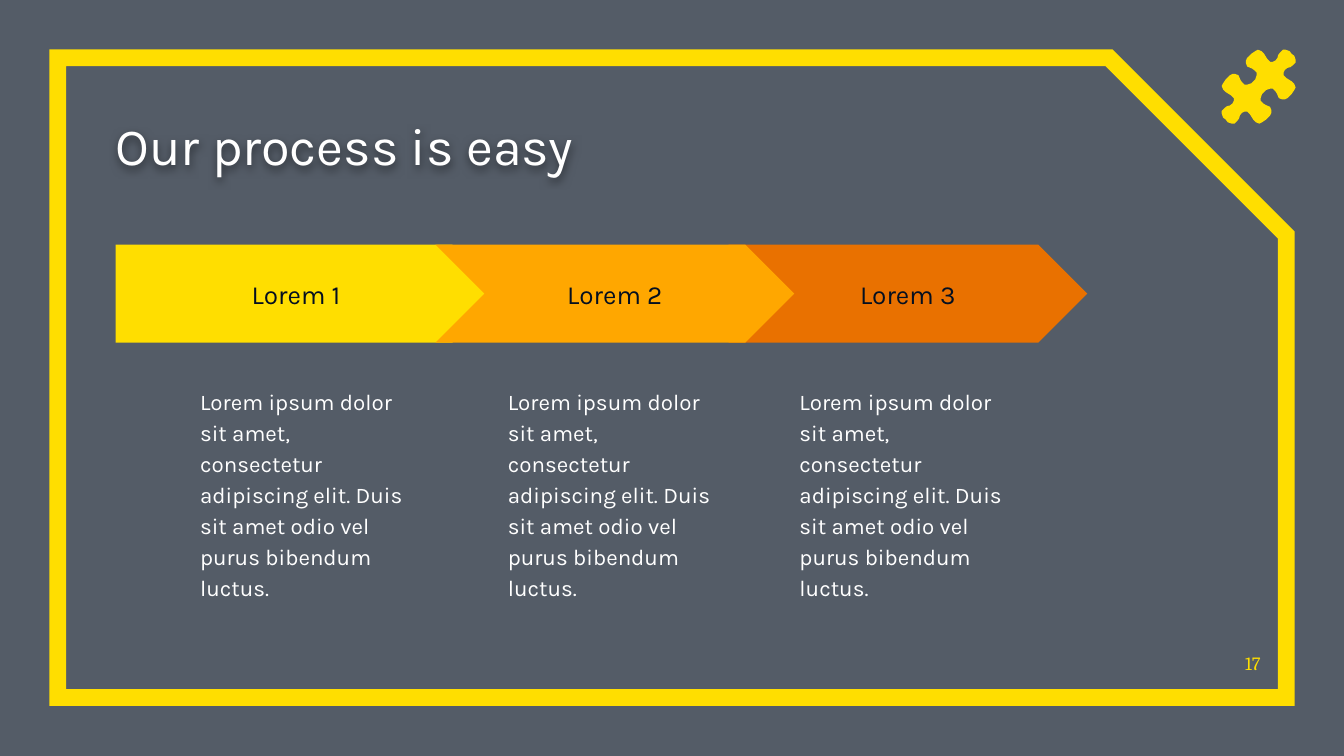
"""Build a slide with a three-step process inside a clipped frame."""
from lxml import etree
from pptx import Presentation
from pptx.dml.color import RGBColor
from pptx.enum.shapes import MSO_SHAPE
from pptx.enum.text import MSO_ANCHOR, PP_ALIGN
from pptx.oxml import parse_xml
from pptx.oxml.ns import qn
from pptx.util import Inches, Pt

RECT, SNIP = MSO_SHAPE.RECTANGLE, MSO_SHAPE.SNIP_1_RECTANGLE
ARROW, CHEVRON = MSO_SHAPE.PENTAGON, MSO_SHAPE.CHEVRON
TOP, MIDDLE, BOTTOM = MSO_ANCHOR.TOP, MSO_ANCHOR.MIDDLE, MSO_ANCHOR.BOTTOM
LEFT, CENTER, RIGHT = PP_ALIGN.LEFT, PP_ALIGN.CENTER, PP_ALIGN.RIGHT
HEX = {"navy": "040F20", "yellow": "FFDE00", "amber": "FFA700",
       "orange": "E97100", "white": "FFFFFF"}
RGB = {name: RGBColor.from_string(code) for name, code in HEX.items()}
BODY = ("Lorem ipsum dolor sit amet, consectetur adipiscing elit. "
        "Duis sit amet odio vel purus bibendum luctus.")
SHADOW = (
    '<a:effectLst xmlns:a="http://schemas.openxmlformats.org/drawingml/2006/main">'
    '<a:outerShdw blurRad="57150" dist="19050" dir="5400000" algn="bl" rotWithShape="0">'
    '<a:srgbClr val="000000"><a:alpha val="50000"/></a:srgbClr>'
    '</a:outerShdw></a:effectLst>')


def write(shape, text, size, color, font="Karla", inset=0.1,
          anchor=TOP, align=LEFT, gap=1.0):
    frame = shape.text_frame
    pad = Inches(inset)
    look = {"word_wrap": True, "vertical_anchor": anchor, "margin_left": pad,
            "margin_right": pad, "margin_top": pad, "margin_bottom": pad}
    for key, value in look.items():
        setattr(frame, key, value)
    par = frame.paragraphs[0]
    par.alignment, par.line_spacing = align, gap
    run = par.add_run()
    run.text = text
    for key, value in {"name": font, "size": Pt(size)}.items():
        setattr(run.font, key, value)
    run.font.color.rgb = RGB[color]


def draw(kind, box, color):
    shape = slide.shapes.add_shape(kind, *map(Inches, box))
    shape.shadow.inherit = False
    shape.fill.solid()
    shape.fill.fore_color.rgb = RGB[color]
    shape.line.fill.background()
    return shape


deck = Presentation()
deck.slide_width, deck.slide_height = Inches(10), Inches(10) * 9 // 16
slide = deck.slides.add_slide(deck.slide_layouts[6])

back = draw(RECT, (0, 0, 10, 5.62), "navy")
back.height = deck.slide_height
tint = back._element.spPr.find(".//" + qn("a:srgbClr"))
etree.SubElement(tint, qn("a:alpha")).set("val", "68000")

frame = draw(SNIP, (0.43, 0.43, 9.14, 4.76), "yellow")
frame.adjustments[0] = 0.277
frame.fill.background()
frame.line.color.rgb = RGB["yellow"]
frame.line.width = Pt(9)
edge = frame._element.spPr.find(qn("a:ln"))
etree.SubElement(edge, qn("a:miter")).set("lim", "800000")

title = slide.shapes.add_textbox(*map(Inches, (0.86, 0.78, 7.35, 0.53)))
write(title, "Our process is easy", 28, "white", inset=0, anchor=BOTTOM)
title._element.spPr.append(parse_xml(SHADOW))

page = slide.shapes.add_textbox(*map(Inches, (9.11, 4.74, 0.27, 0.28)))
write(page, "17", 10, "yellow", font="Cambria", inset=0, anchor=BOTTOM, align=RIGHT)

curve = [(49, -49), (46, -53), (40, -55), (36, -55), (32, -51), (29, -47),
         (28, -43), (25, -39), (21, -37), (17, -37), (13, -41), (8, -49),
         (4, -53), (-1, -55), (-5, -53), (-11, -49), (-17, -43), (-19, -39),
         (-19, -35), (-17, -30), (-10, -27), (-7, -25), (-3, -21), (-3, -17),
         (-5, -11), (-8, -8)]
half = curve + [(y, x) for x, y in reversed(curve)]
ring = half + [(-x, -y) for x, y in half]
dots = [(Inches(9.09 + (x + 55) / 200), Inches(0.37 + (y + 55) / 200))
        for x, y in ring]
pen = slide.shapes.build_freeform(*dots[0])
pen.add_line_segments(dots[1:], close=True)
puzzle = pen.convert_to_shape()
puzzle.shadow.inherit = False
puzzle.fill.solid()
puzzle.fill.fore_color.rgb = RGB["yellow"]
puzzle.line.fill.background()

steps = [("Lorem 3", CHEVRON, 5.42, 2.67, "orange", 5.85),
         ("Lorem 1", ARROW, 0.86, 2.87, "yellow", 1.39),
         ("Lorem 2", CHEVRON, 3.24, 2.67, "amber", 3.68)]
for label, kind, left, width, color, start in steps:
    step = draw(kind, (left, 1.82, width, 0.73), color)
    step.adjustments[0] = 0.5
    write(step, label, 14, "navy", anchor=MIDDLE, align=CENTER)
    note = slide.shapes.add_textbox(*map(Inches, (start, 2.76, 1.81, 1.56)))
    write(note, BODY, 12, "white", gap=1.15)

deck.save("out.pptx")
